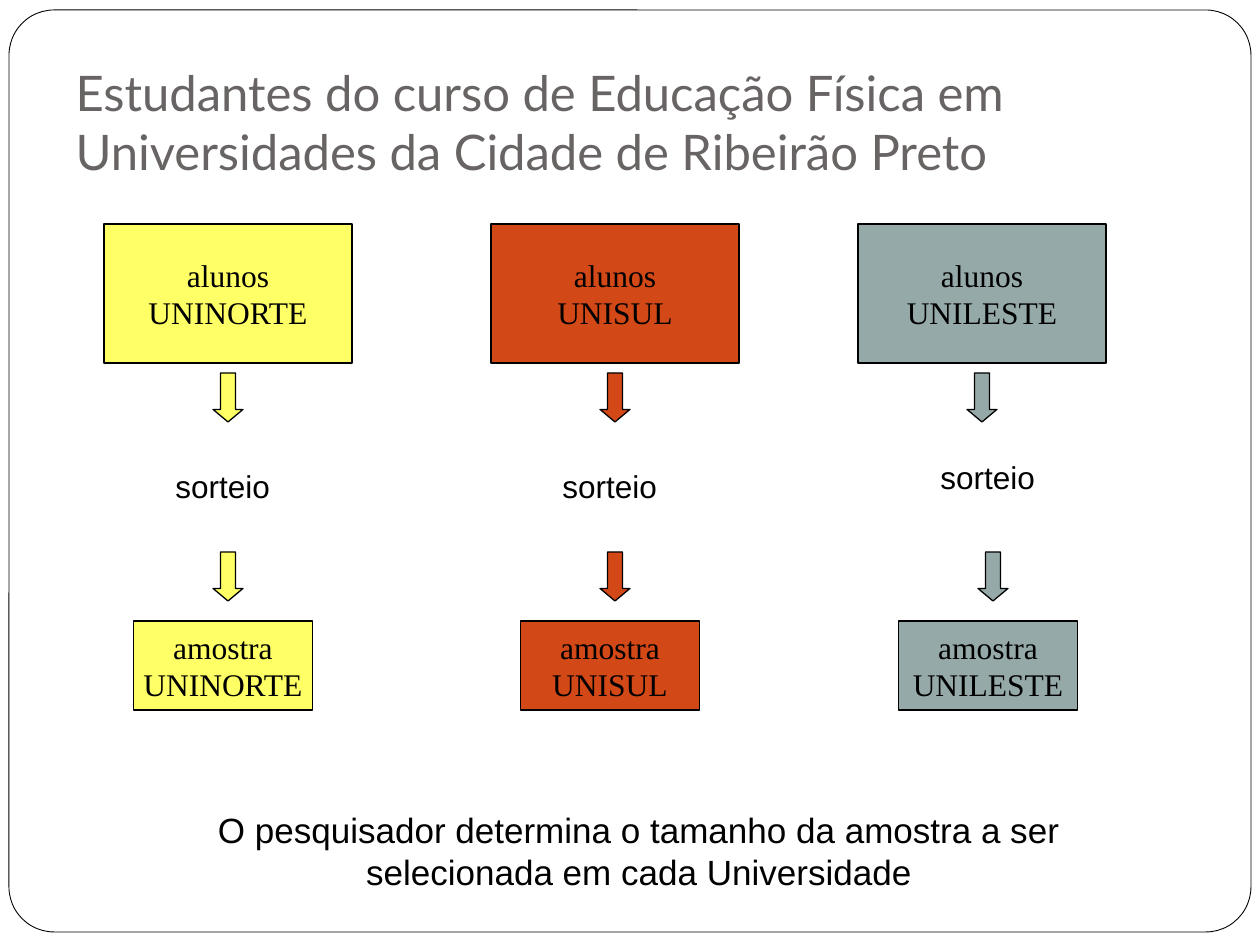
import pptx
import pptx.dml.color
import pptx.enum.shapes
import pptx.enum.text
import pptx.util
from dataclasses import dataclass

TITLE = "Estudantes do curso de Educação Física em Universidades da Cidade de Ribeirão Preto"
NOTE = "O pesquisador determina o tamanho da amostra a ser selecionada em cada Universidade"
DRAW = "sorteio"

# university, fill, centre of upper part, centre of lower part, top of draw label
COLUMNS = [
    ("UNINORTE", "FFFF66", 228, 228, 461),
    ("UNISUL", "D34817", 615, 615, 461),
    ("UNILESTE", "96A9A9", 982, 993, 452),
]


@dataclass(frozen=True)
class Theme:
    white: str = "FFFFFF"
    black: str = "000000"
    title_color: str = "696464"
    title_font: str = "Lato"
    box_font: str = "Times New Roman"
    text_font: str = "Arial"
    title_size: int = 28
    body_size: int = 18
    note_size: int = 20
    frame_line: float = 0.5
    shape_line: float = 0.75


THEME = Theme()
SHAPES = pptx.enum.shapes.MSO_SHAPE
ALIGN = pptx.enum.text.PP_ALIGN
ANCHOR = pptx.enum.text.MSO_ANCHOR
AUTO_SIZE = pptx.enum.text.MSO_AUTO_SIZE
SCALE = 914400 / 126
POPULATION_SIZE = (248, 139)
SAMPLE_SIZE = (179, 89)
ARROW_SIZE = (30, 49)
LABEL_SIZE = (120, 50)
LOWER_SHIFT = -5  # label and sample box sit slightly left of their arrow


def px(value):
    return pptx.util.Emu(round(value * SCALE))


def rgb(value):
    return pptx.dml.color.RGBColor.from_string(value)


def write(shape, text, font, size, color, align):
    text_frame = shape.text_frame
    text_frame.text = text
    for paragraph in text_frame.paragraphs:
        paragraph.alignment = align
        for run in paragraph.runs:
            run.font.name = font
            run.font.size = pptx.util.Pt(size)
            run.font.color.rgb = rgb(color)
    return text_frame


def add_shape(slide, kind, left, top, size, fill, line_width, adjustments=()):
    shape = slide.shapes.add_shape(kind, px(left), px(top), *map(px, size))
    shape.shadow.inherit = False
    shape.fill.solid()
    shape.fill.fore_color.rgb = rgb(fill)
    shape.line.color.rgb = rgb(THEME.black)
    shape.line.width = pptx.util.Pt(line_width)
    for index, value in enumerate(adjustments):
        shape.adjustments[index] = value
    return shape


def add_box(slide, center, top, size, fill, text):
    box = add_shape(slide, SHAPES.RECTANGLE, center - size[0] / 2, top, size,
                    fill, THEME.shape_line)
    text_frame = write(box, text, THEME.box_font, THEME.body_size, THEME.black, ALIGN.CENTER)
    text_frame.word_wrap = False
    text_frame.vertical_anchor = ANCHOR.MIDDLE


def add_arrow(slide, center, top, fill):
    add_shape(slide, SHAPES.DOWN_ARROW, center - ARROW_SIZE[0] / 2, top, ARROW_SIZE,
              fill, THEME.shape_line, (0.5, 0.417))


def add_text(slide, left, top, size, text, font_size, align, wrap):
    box = slide.shapes.add_textbox(px(left), px(top), *map(px, size))
    text_frame = write(box, text, THEME.text_font, font_size, THEME.black, align)
    text_frame.word_wrap = wrap
    text_frame.auto_size = AUTO_SIZE.SHAPE_TO_FIT_TEXT


def add_column(slide, university, fill, upper, lower, label_top):
    add_box(slide, upper, 224, POPULATION_SIZE, fill, f"alunos\n{university}")
    add_arrow(slide, upper, 373, fill)
    center = lower + LOWER_SHIFT
    add_text(slide, center - LABEL_SIZE[0] / 2, label_top, LABEL_SIZE, DRAW,
             THEME.body_size, ALIGN.LEFT, False)
    add_arrow(slide, lower, 552, fill)
    add_box(slide, center, 621, SAMPLE_SIZE, fill, f"amostra\n{university}")


def place_title(slide):
    title = slide.shapes.title
    title.left, title.top, title.width, title.height = map(px, (63, 35, 1134, 158))
    text_frame = write(title, TITLE, THEME.title_font, THEME.title_size,
                       THEME.title_color, ALIGN.LEFT)
    text_frame.word_wrap = True
    text_frame.auto_size = AUTO_SIZE.NONE
    text_frame.vertical_anchor = ANCHOR.BOTTOM
    text_frame.margin_bottom = pptx.util.Inches(0.1)


def main():
    presentation = pptx.Presentation()
    presentation.slide_width, presentation.slide_height = px(1260), px(945)
    slide = presentation.slides.add_slide(presentation.slide_layouts[5])
    place_title(slide)
    frame = add_shape(slide, SHAPES.ROUNDED_RECTANGLE, 9, 10, (1242, 922),
                      THEME.white, THEME.frame_line, (0.049,))
    slide.shapes.title.element.addprevious(frame.element)  # frame goes behind the title
    for column in COLUMNS:
        add_column(slide, *column)
    add_text(slide, 174, 802, (930, 97), NOTE, THEME.note_size, ALIGN.CENTER, True)
    presentation.save("out.pptx")


if __name__ == "__main__":
    main()
